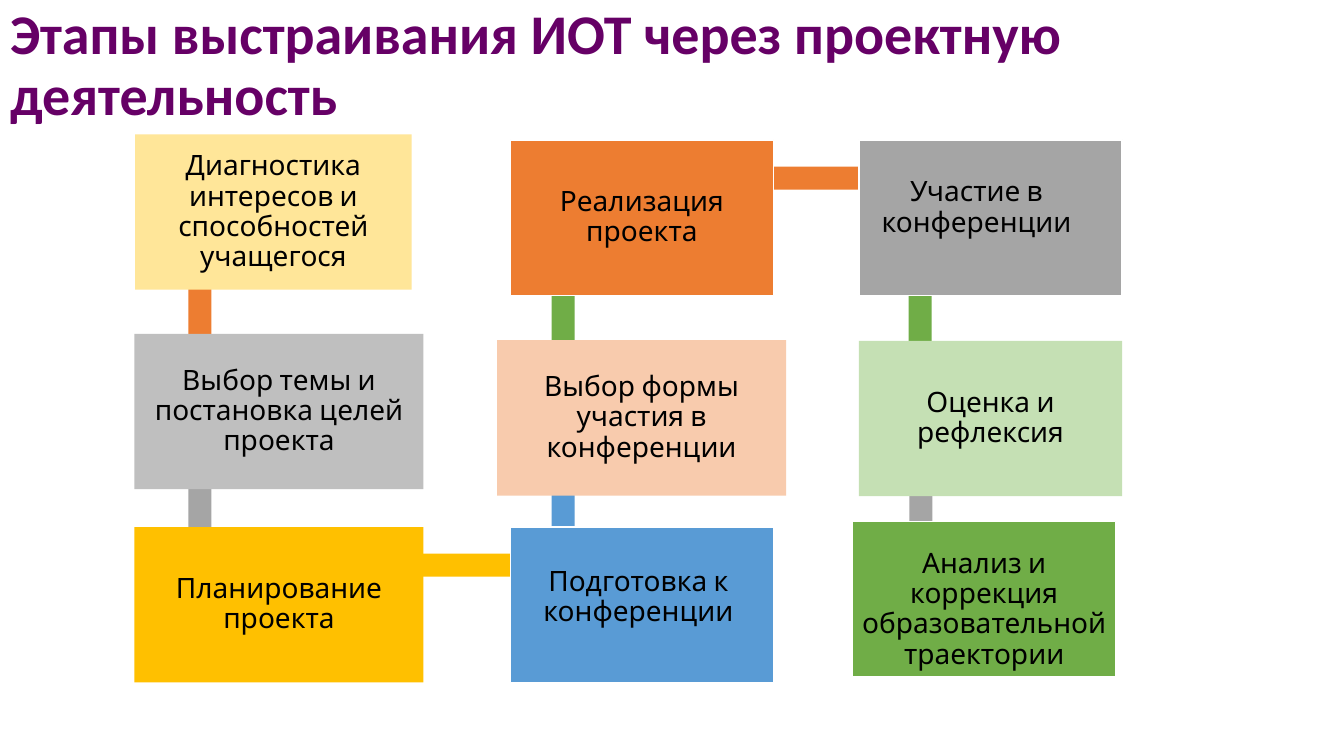
import pptx
import pptx.dml.color
import pptx.enum.shapes
import pptx.enum.text
import pptx.util

Pt = pptx.util.Pt
RGBColor = pptx.dml.color.RGBColor
RECTANGLE = pptx.enum.shapes.MSO_SHAPE.RECTANGLE
ALIGN = pptx.enum.text.PP_ALIGN
MIDDLE = pptx.enum.text.MSO_ANCHOR.MIDDLE

PURPLE = RGBColor(0x66, 0x00, 0x66)
BLACK = RGBColor(0x00, 0x00, 0x00)
WHITE = RGBColor(0xFF, 0xFF, 0xFF)
ORANGE = RGBColor(0xED, 0x7D, 0x31)
PEACH = RGBColor(0xF8, 0xCB, 0xAD)
GREY = RGBColor(0xA5, 0xA5, 0xA5)
LIGHT_GREY = RGBColor(0xBF, 0xBF, 0xBF)
GOLD = RGBColor(0xFF, 0xC0, 0x00)
LIGHT_GOLD = RGBColor(0xFF, 0xE6, 0x99)
BLUE = RGBColor(0x59, 0x9B, 0xD5)
GREEN = RGBColor(0x70, 0xAD, 0x47)
LIGHT_GREEN = RGBColor(0xC5, 0xE0, 0xB4)

STAGE_HEIGHT = 111
NARROW, WIDE = 188, 206.5
BAR_THICKNESS = 16.5
BAR_LENGTH = 137.5

# left, top, length, rotation, colour
BARS = [
    (74, 187, BAR_LENGTH, 90, ORANGE),
    (74, 326, BAR_LENGTH, 90, GREY),
    (143.5, 395.5, 258.5, 0, GOLD),
    (333.5, 326, BAR_LENGTH, 270, BLUE),
    (333.5, 187, BAR_LENGTH, 270, GREEN),
    (402.5, 119, 249, 0, ORANGE),
    (588.5, 193, BAR_LENGTH, 270, GREEN),
    (589, 326, BAR_LENGTH, 90, GREY),
]

# left, top, width, colour, outlined, paragraphs
STAGES = [
    (96.5, 96, 197.5, LIGHT_GOLD, False,
     ["Диагностика интересов и способностей учащегося"]),
    (96, 238.5, WIDE, LIGHT_GREY, False, ["Выбор темы и постановка целей проекта"]),
    (96, 376.5, WIDE, GOLD, False, ["Планирование проекта"]),
    (364.5, 376.5, NARROW, BLUE, True, []),
    (355, 243, WIDE, PEACH, False, ["Выбор формы участия в конференции"]),
    (364.5, 100, NARROW, ORANGE, True, ["Реализация", "проекта"]),
    (613.5, 100, NARROW, GREY, True, []),
    (613.5, 243.5, NARROW, LIGHT_GREEN, False, ["Оценка и рефлексия"]),
    (609, 372.5, NARROW, GREEN, True, []),
]

# Captions set off from the centre of their stage: left, top, text
CAPTIONS = [
    (362, 371, "Подготовка к конференции"),
    (603.5, 93, "Участие в конференции"),
    (609, 380, "Анализ и коррекция образовательной траектории"),
]


class StageSlide:
    font = "Cabin"
    size = 20
    inset = 6

    def __init__(self, deck):
        self.slide = deck.slides.add_slide(deck.slide_layouts[5])

    def add_span(self, para, text, font, size, color, bold=False):
        para.line_spacing = 0.9
        span = para.add_run()
        span.text = text
        span.font.name = font
        span.font.size = Pt(size)
        span.font.bold = bold
        span.font.color.rgb = color

    def title(self, text):
        box = self.slide.shapes.title
        box.left, box.top, box.width, box.height = Pt(0), Pt(-4.5), Pt(942), Pt(104.5)
        frame = box.text_frame
        frame.auto_size = pptx.enum.text.MSO_AUTO_SIZE.NONE
        frame.vertical_anchor = MIDDLE
        para = frame.paragraphs[0]
        para.alignment = ALIGN.LEFT
        self.add_span(para, text, "Calibri", 40, PURPLE, True)

    def rectangle(self, left, top, width, height, color):
        box = self.slide.shapes.add_shape(
            RECTANGLE, Pt(left), Pt(top), Pt(width), Pt(height))
        box.shadow.inherit = False
        box.fill.solid()
        box.fill.fore_color.rgb = color
        box.line.fill.background()
        return box

    def bar(self, left, top, length, rotation, color):
        self.rectangle(left, top, length, BAR_THICKNESS, color).rotation = rotation

    def fill_text(self, box, texts):
        frame = box.text_frame
        frame.word_wrap = True
        frame.vertical_anchor = MIDDLE
        frame.margin_left = frame.margin_right = Pt(self.inset)
        frame.margin_top = frame.margin_bottom = Pt(self.inset)
        for index, text in enumerate(texts):
            para = frame.add_paragraph() if index else frame.paragraphs[0]
            para.alignment = ALIGN.CENTER
            self.add_span(para, text, self.font, self.size, BLACK)

    def stage(self, left, top, width, color, outlined, texts):
        box = self.rectangle(left, top, width, STAGE_HEIGHT, color)
        if outlined:
            box.line.color.rgb = WHITE
            box.line.width = Pt(1)
        self.fill_text(box, texts)

    def caption(self, left, top, text):
        box = self.slide.shapes.add_textbox(
            Pt(left), Pt(top), Pt(NARROW), Pt(STAGE_HEIGHT))
        self.fill_text(box, [text])


def main():
    deck = pptx.Presentation()
    deck.slide_width, deck.slide_height = Pt(960), Pt(540)
    page = StageSlide(deck)
    page.title("Этапы выстраивания ИОТ через проектную деятельность")
    for bar in BARS:
        page.bar(*bar)
    for stage in STAGES:
        page.stage(*stage)
    for caption in CAPTIONS:
        page.caption(*caption)
    deck.save("out.pptx")


if __name__ == "__main__":
    main()
